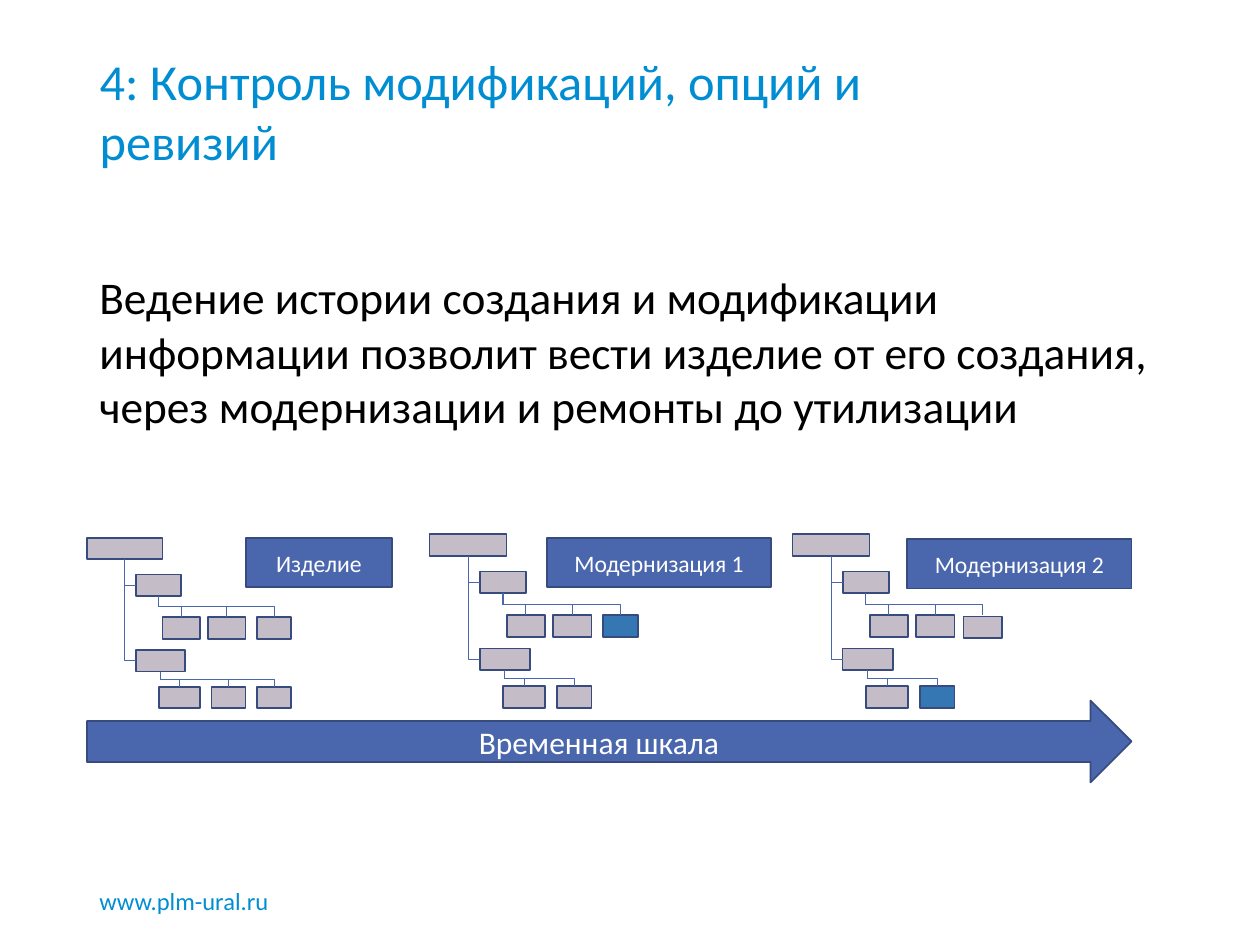
from collections import namedtuple

from lxml import etree
from pptx import Presentation
from pptx import util as u
from pptx.dml.color import RGBColor
from pptx.enum import shapes, text
from pptx.oxml import ns

Inches = u.Inches
FONT = "Calibri"
COLORS = {"accent": "008DD2", "ink": "000000", "white": "FFFFFF", "bar": "4A66AC",
          "edge": "374B7F", "part": "C4BCC6", "changed": "3477B2"}

Leaf = namedtuple("Leaf", "left width color drop", defaults=("part", 0))
Branch = namedtuple("Branch", "top width leaf_top leaves")
PART_HEIGHT = 0.17
ROOT_WIDTH = 0.6
BRANCH_LEFT = 0.39


def color(name):
    return RGBColor.from_string(COLORS[name])


def write(shape, words, size, ink, align=text.PP_ALIGN.LEFT, anchor=text.MSO_ANCHOR.TOP):
    frame = shape.text_frame
    settings = {"word_wrap": True, "vertical_anchor": anchor,
                "auto_size": text.MSO_AUTO_SIZE.NONE,
                "margin_left": Inches(0.1), "margin_right": Inches(0.1),
                "margin_top": Inches(0.05), "margin_bottom": Inches(0.05)}
    for name, value in settings.items():
        setattr(frame, name, value)
    para = frame.paragraphs[0]
    para.alignment = align
    span = para.add_run()
    span.text = words
    for name, value in {"name": FONT, "size": u.Pt(size), "bold": False}.items():
        setattr(span.font, name, value)
    span.font.color.rgb = color(ink)


def add_title(page, box, words):
    title = page.shapes.title
    for name, value in zip(("left", "top", "width", "height"), box):
        setattr(title, name, Inches(value))
    write(title, words, 28.8, "accent", anchor=text.MSO_ANCHOR.MIDDLE)


def add_text(page, box, words, size, ink):
    write(page.shapes.add_textbox(*map(Inches, box)), words, size, ink)


def add_block(parent, box, fill, kind=shapes.MSO_SHAPE.RECTANGLE):
    block = parent.shapes.add_shape(kind, *map(Inches, box))
    block.shadow.inherit = False
    block.fill.solid()
    block.fill.fore_color.rgb = color(fill)
    block.line.color.rgb = color("edge")
    block.line.width = u.Pt(1)
    return block


def add_label(page, box, words, size=13.5, kind=shapes.MSO_SHAPE.RECTANGLE):
    block = add_block(page, box, "bar", kind)
    write(block, words, size, "white", text.PP_ALIGN.CENTER, text.MSO_ANCHOR.MIDDLE)


def add_elbow(parent, start, end, preset):
    """Bent line that leaves its start downwards: a flipped elbow turned by 270 degrees."""
    (x1, y1), (x2, y2) = start, end
    mid_x, mid_y = (x1 + x2) / 2, (y1 + y2) / 2
    half_x, half_y = (x2 - x1) / 2, (y2 - y1) / 2
    corners = (mid_x + half_y, mid_y - half_x, mid_x - half_y, mid_y + half_x)
    elbow = parent.shapes.add_connector(shapes.MSO_CONNECTOR.ELBOW, *map(Inches, corners))
    elbow.line.color.rgb = color("bar")
    elbow.line.width = u.Pt(0.5)
    props = elbow._element.spPr
    props.find(ns.qn("a:xfrm")).set("rot", "16200000")
    props.find(ns.qn("a:prstGeom")).set("prst", preset)
    etree.SubElement(props, ns.qn("a:effectLst"))


def add_tree(page, left, top, scale, branches):
    """Product structure: a root, its branches and a row of leaves under each branch."""
    group = page.shapes.add_group_shape()

    def place(x, y):
        return left + x * scale, top + y * scale

    def add_part(x, y, width, fill="part"):
        add_block(group, (*place(x, y), width * scale, PART_HEIGHT * scale), fill)

    add_part(0, 0, ROOT_WIDTH)
    for branch in branches:
        add_part(BRANCH_LEFT, branch.top, branch.width)
        add_elbow(group, place(ROOT_WIDTH / 2, PART_HEIGHT),
                  place(BRANCH_LEFT, branch.top + PART_HEIGHT / 2), "bentConnector2")
        start = place(BRANCH_LEFT + branch.width / 2, branch.top + PART_HEIGHT)
        for leaf in branch.leaves:
            add_part(leaf.left, branch.leaf_top + leaf.drop, leaf.width, leaf.color)
            add_elbow(group, start, place(leaf.left + leaf.width / 2, branch.leaf_top),
                      "bentConnector3")


def add_timeline(page, left, top, width):
    upper = [Leaf(0.6, 0.3), Leaf(0.96, 0.3)]
    lower = [Leaf(0.57, 0.33)]
    stages = [
        (0, 0.03, 1, [Leaf(1.35, 0.27)], [Leaf(0.99, 0.27), Leaf(1.35, 0.27)]),
        (2.72, 0, 1.02, [Leaf(1.35, 0.27, "changed")], [Leaf(0.99, 0.27)]),
        (5.6, 0, 1.02, [Leaf(1.33, 0.3, drop=0.01)], [Leaf(0.99, 0.27, "changed")]),
    ]
    for x, y, scale, upper_end, lower_end in stages:
        add_tree(page, left + x, top + y, scale,
                 [Branch(0.29, 0.36, 0.63, upper + upper_end),
                  Branch(0.89, 0.39, 1.18, lower + lower_end)])
    labels = [(1.26, 0.03, 1.16, "Изделие"), (3.65, 0.03, 1.78, "Модернизация 1"),
              (6.51, 0.04, 1.78, "Модернизация 2")]
    for x, y, label_width, words in labels:
        add_label(page, (left + x, top + y, label_width, 0.39), words)
    add_label(page, (left, top + 1.32, width, 0.65), "Временная шкала", 18,
              shapes.MSO_SHAPE.RIGHT_ARROW)


def main():
    deck = Presentation()
    deck.slide_width, deck.slide_height = Inches(10), Inches(7.5)
    page = deck.slides.add_slide(deck.slide_layouts[5])
    add_title(page, (0.69, 0.34, 6.34, 1.07), "4: Контроль модификаций, опций и ревизий")
    add_text(page, (0.69, 2.09, 8.62, 1.44),
             "Ведение истории создания и модификации информации позволит вести изделие "
             "от его создания, через модернизации и ремонты до утилизации", 25.9, "ink")
    add_timeline(page, 0.69, 4.24, 8.29)
    add_text(page, (0.69, 6.98, 1.73, 0.34), "www.plm-ural.ru", 14, "accent")
    deck.save("out.pptx")


if __name__ == "__main__":
    main()
